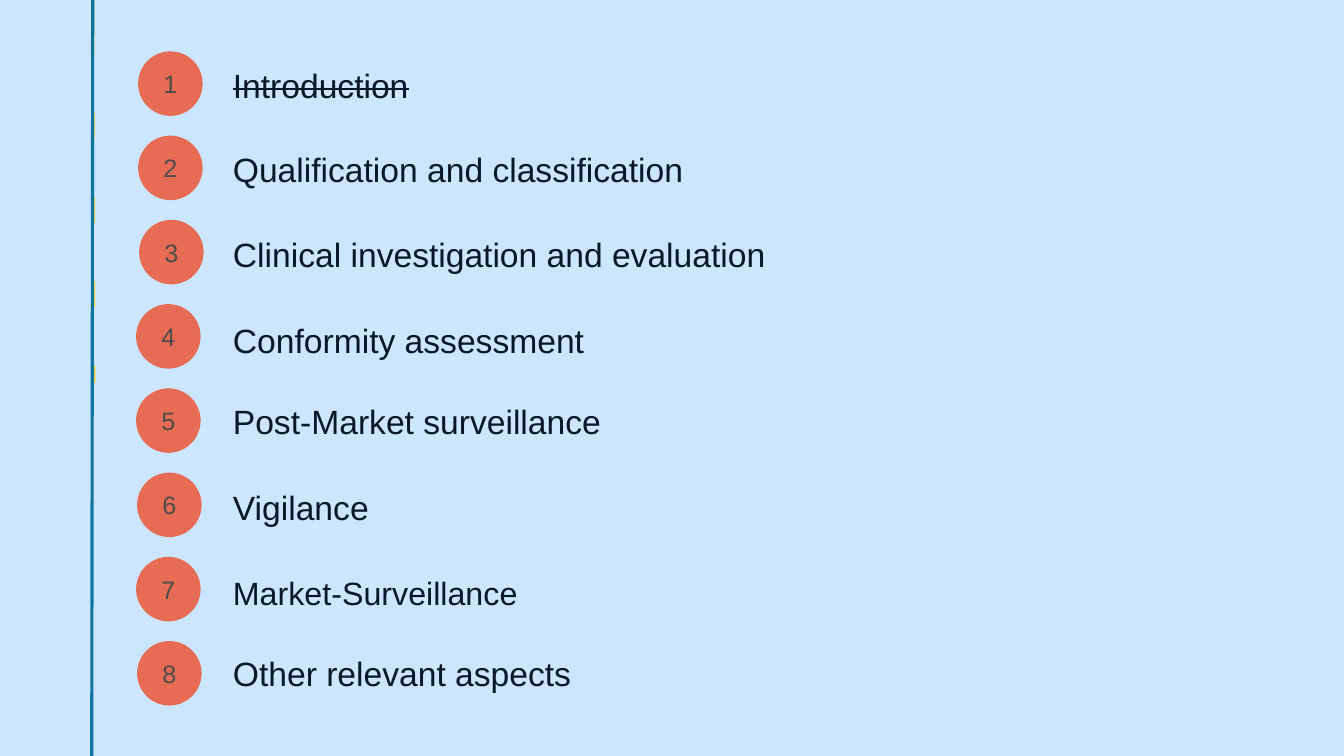
"""Build an agenda slide with eight numbered topics beside a vertical rule."""
from lxml import etree
from pptx import Presentation
from pptx.dml.color import RGBColor
from pptx.enum.shapes import MSO_CONNECTOR, MSO_SHAPE
from pptx.enum.text import MSO_ANCHOR, PP_ALIGN
from pptx.oxml.ns import qn
from pptx.util import Inches, Pt

STRAIGHT = MSO_CONNECTOR.STRAIGHT
OVAL, ROUNDED = MSO_SHAPE.OVAL, MSO_SHAPE.ROUNDED_RECTANGLE
MIDDLE = MSO_ANCHOR.MIDDLE
LEFT, CENTER = PP_ALIGN.LEFT, PP_ALIGN.CENTER

COLORS = {"sky": "CCE6FF", "yellow": "FFD129", "teal": "0D75A0",
          "coral": "E76C53", "gray": "4D4D4D", "navy": "051828"}

# topic, size, badge left, label centre, label width
TOPICS = [
    ("Introduction", 24, 1.37, 0.84, 5.9),
    ("Qualification and classification", 24, 1.37, 1.68, 6.88),
    ("Clinical investigation and evaluation", 24, 1.38, 2.52, 6.72),
    ("Conformity assessment", 24, 1.35, 3.37, 7.25),
    ("Post-Market surveillance", 24, 1.35, 4.18, 10.83),
    ("Vigilance", 24, 1.36, 5.03, 10.92),
    ("Market-Surveillance", 23, 1.35, 5.88, 7.75),
    ("Other relevant aspects", 24, 1.36, 6.68, 5.69),
]
DONE = {"Introduction"}
FIRST_BADGE, LAST_BADGE, BADGE = 0.51, 6.36, 0.64
PITCH = (LAST_BADGE - FIRST_BADGE) / (len(TOPICS) - 1)
PANEL_LEFT, PANEL_W, PANEL_H = -0.46, 10.27, 0.58
LABEL_LEFT, LABEL_H = 2.22, 0.54


def rgb(name):
    return RGBColor.from_string(COLORS[name])


def add_rule(s, x1, y1, x2, y2, color):
    line = s.shapes.add_connector(STRAIGHT, *map(Inches, (x1, y1, x2, y2)))
    line.line.color.rgb = rgb(color)
    line.line.width = Pt(2.25)
    etree.SubElement(line._element.spPr, qn("a:effectLst"))


def add_filled(s, kind, box, color):
    sp = s.shapes.add_shape(kind, *map(Inches, box))
    sp.shadow.inherit = False
    sp.fill.solid()
    sp.fill.fore_color.rgb = rgb(color)
    sp.line.fill.background()
    return sp


def write(sp, text, size, color, align):
    tf = sp.text_frame
    tf.word_wrap = True
    tf.vertical_anchor = MIDDLE
    for side in ("left", "top", "right", "bottom"):
        setattr(tf, f"margin_{side}", Inches(0.09))
    p = tf.paragraphs[0]
    p.alignment = align
    r = p.add_run()
    r.text = text
    for name, value in {"name": "Arial", "size": Pt(size)}.items():
        setattr(r.font, name, value)
    r.font.color.rgb = rgb(color)
    return r


def main():
    prs = Presentation()
    prs.slide_width, prs.slide_height = Inches(13.33), Inches(7.5)
    s = prs.slides.add_slide(prs.slide_layouts[6])
    s.background.fill.solid()
    s.background.fill.fore_color.rgb = rgb("sky")

    add_rule(s, 0.92, 0, 0.93, 3.8, "yellow")
    tops = [FIRST_BADGE + i * PITCH for i in range(len(TOPICS))]
    for top in tops:
        y = top + (BADGE - PANEL_H) / 2
        add_filled(s, ROUNDED, (PANEL_LEFT, y, PANEL_W, PANEL_H), "sky")
    add_rule(s, 0.92, 0, 0.91, 7.5, "teal")

    for number, (top, topic) in enumerate(zip(tops, TOPICS), 1):
        text, size, left, center, width = topic
        badge = add_filled(s, OVAL, (left, top, BADGE, BADGE), "coral")
        write(badge, str(number), 18, "gray", CENTER)
        box = (LABEL_LEFT, center - LABEL_H / 2, width, LABEL_H)
        label = s.shapes.add_textbox(*map(Inches, box))
        r = write(label, text, size, "navy", LEFT)
        if text in DONE:
            r._r.get_or_add_rPr().set("strike", "sngStrike")

    prs.save("out.pptx")


if __name__ == "__main__":
    main()
